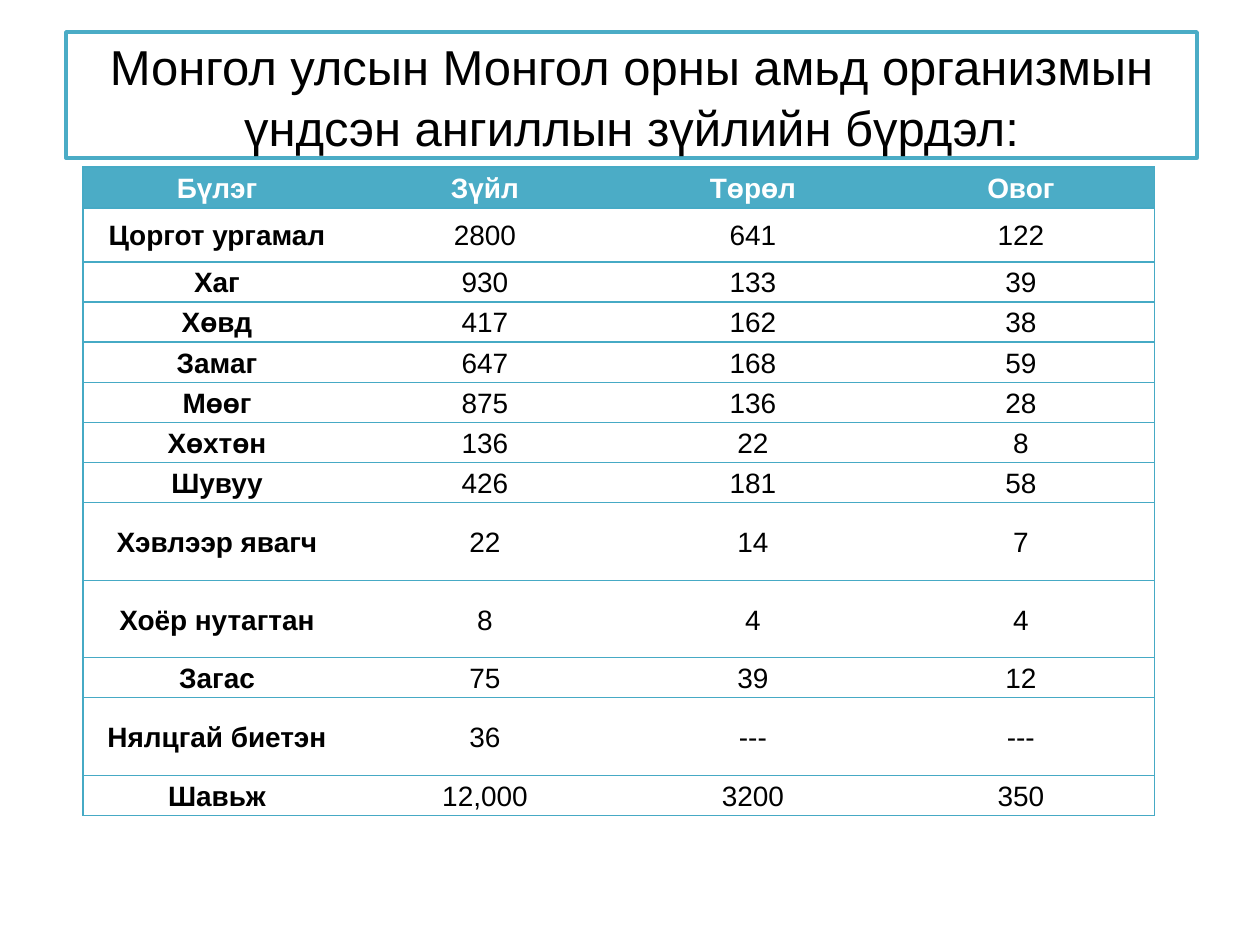
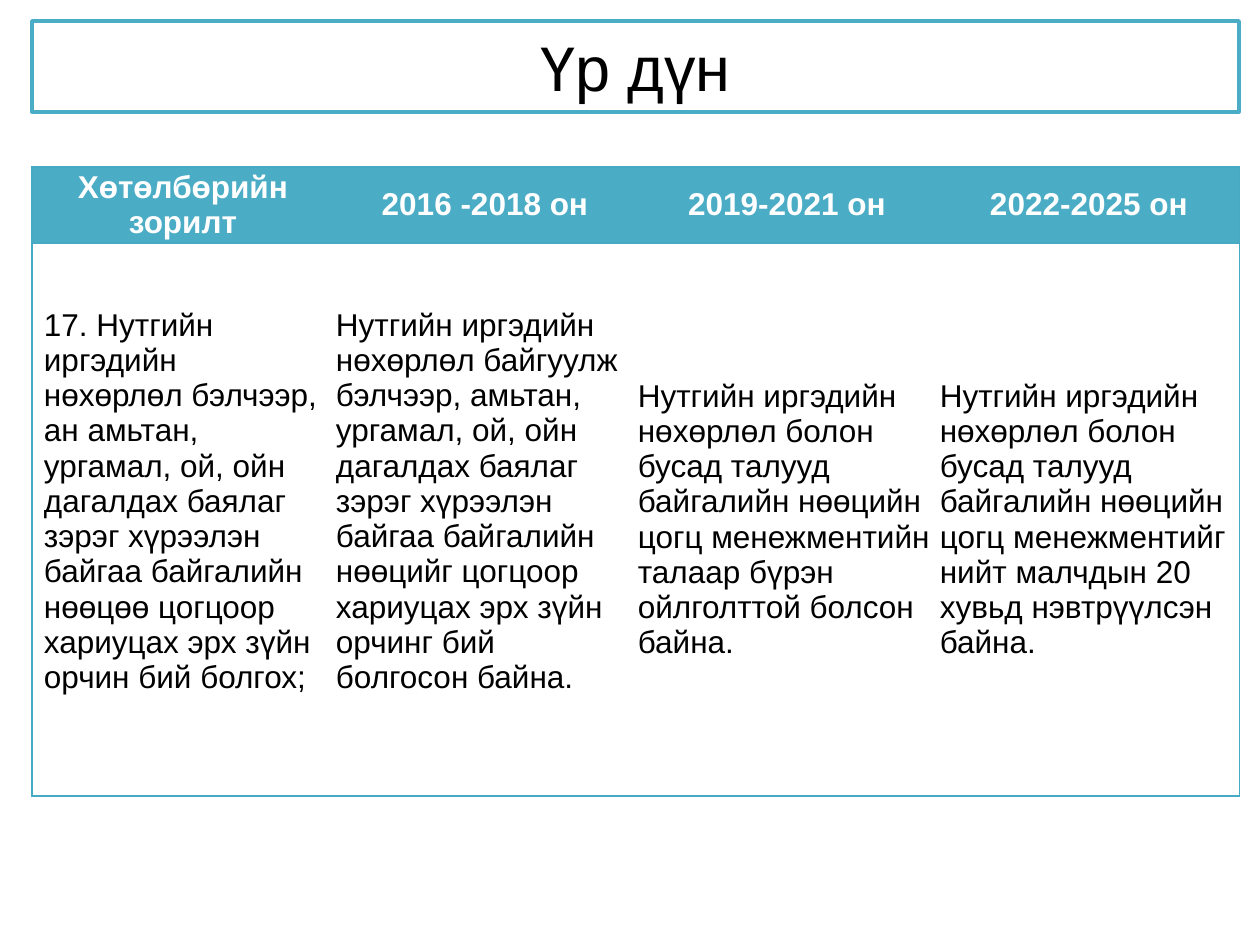
from lxml.etree import SubElement
from pptx import Presentation
from pptx.dml.color import RGBColor
from pptx.enum.text import MSO_ANCHOR as Anchor, MSO_AUTO_SIZE as AutoSize, PP_ALIGN as Align
from pptx.oxml.ns import qn
from pptx.util import Inches, Pt

PX = Inches(1) / 126
TEAL = RGBColor(0x4B, 0xAC, 0xC6)
BORDER = RGBColor(0x46, 0xAA, 0xC5)
WHITE = RGBColor(0xFF, 0xFF, 0xFF)
BLACK = RGBColor(0x00, 0x00, 0x00)
FONT = "Arial"
TITLE_ONLY = 5

SPECIES = {
    "title": "Монгол улсын Монгол орны амьд организмын үндсэн ангиллын зүйлийн бүрдэл:",
    "title_box": (66, 32, 1131, 126),
    "title_size": 28,
    "title_spacing": 1.05,
    "rows": [
        ("Бүлэг", "Зүйл", "Төрөл", "Овог"),
        ("Цоргот ургамал", "2800", "641", "122"),
        ("Хаг", "930", "133", "39"),
        ("Хөвд", "417", "162", "38"),
        ("Замаг", "647", "168", "59"),
        ("Мөөг", "875", "136", "28"),
        ("Хөхтөн", "136", "22", "8"),
        ("Шувуу", "426", "181", "58"),
        ("Хэвлээр явагч", "22", "14", "7"),
        ("Хоёр нутагтан", "8", "4", "4"),
        ("Загас", "75", "39", "12"),
        ("Нялцгай биетэн", "36", "---", "---"),
        ("Шавьж", "12,000", "3200", "350"),
    ],
    "table_at": (83, 167),
    "column_width": 268,
    "row_heights": [41, 54, 40, 40, 41, 40, 40, 40, 78, 77, 40, 78, 40],
    "text_size": 16,
    "line_spacing": 1.07,
    "body_align": Align.CENTER,
    "bold_first_column": True,
    "inset": 1,
    "cell_insets": {},
}

RESULTS = {
    "title": "Үр дүн",
    "title_box": (32, 21, 1207, 91),
    "title_size": 36,
    "title_spacing": 1.0,
    "rows": [
        ("Хөтөлбөрийн зорилт", "2016 -2018 он", "2019-2021 он", "2022-2025 он"),
        (
            "17. Нутгийн иргэдийн нөхөрлөл бэлчээр, ан амьтан, ургамал, ой, ойн дагалдах баялаг "
            "зэрэг хүрээлэн байгаа байгалийн нөөцөө цогцоор хариуцах эрх зүйн орчин бий болгох;",
            "Нутгийн иргэдийн нөхөрлөл байгуулж бэлчээр, амьтан, ургамал, ой, ойн дагалдах баялаг "
            "зэрэг хүрээлэн байгаа байгалийн нөөцийг цогцоор хариуцах эрх зүйн орчинг бий "
            "болгосон байна.",
            "Нутгийн иргэдийн нөхөрлөл болон бусад талууд байгалийн нөөцийн цогц менежментийн "
            "талаар бүрэн ойлголттой болсон байна.",
            "Нутгийн иргэдийн нөхөрлөл болон бусад талууд байгалийн нөөцийн цогц менежментийг "
            "нийт малчдын 20 хувьд нэвтрүүлсэн байна.",
        ),
    ],
    "table_at": (32, 167),
    "column_width": 302,
    "row_heights": [76, 553],
    "text_size": 18,
    "line_spacing": 1.0,
    "body_align": Align.LEFT,
    "bold_first_column": False,
    "inset": 2,
    "cell_insets": {
        (1, 0): {"margin_left": 12, "margin_right": 12, "margin_bottom": 38},
        (1, 1): {"margin_bottom": 38},
    },
}


def px(length):
    return round(length * PX)


def apply(target, values):
    for name, value in values.items():
        setattr(target, name, value)


def format_paragraph(paragraph, align, spacing, size, color, bold):
    apply(paragraph, {"alignment": align, "line_spacing": spacing})
    apply(paragraph.font, {"name": FONT, "size": Pt(size), "bold": bold})
    paragraph.font.color.rgb = color


def add_title(slide, content):
    title = slide.shapes.title
    left, top, width, height = map(px, content["title_box"])
    apply(title, {"left": left, "top": top, "width": width, "height": height})
    title.fill.solid()
    title.fill.fore_color.rgb = WHITE
    title.line.color.rgb = TEAL
    title.line.width = Pt(2)
    frame = title.text_frame
    frame.text = content["title"]
    apply(frame, {"word_wrap": True, "auto_size": AutoSize.NONE, "vertical_anchor": Anchor.MIDDLE})
    format_paragraph(frame.paragraphs[0], Align.CENTER, content["title_spacing"],
                     content["title_size"], BLACK, False)


def set_borders(cell, visible):
    properties = cell._tc.get_or_add_tcPr()
    for side in "LRTB":
        line = SubElement(properties, qn(f"a:ln{side}"), w=str(Pt(0.75)))
        if side in visible:
            fill = SubElement(line, qn("a:solidFill"))
            SubElement(fill, qn("a:srgbClr"), val=str(BORDER))
        else:
            SubElement(line, qn("a:noFill"))


def format_cell(cell, row, column, content):
    header = row == 0
    last_column = len(content["rows"][0]) - 1
    edges = "TB" + ("L" if column == 0 else "") + ("R" if column == last_column else "")
    set_borders(cell, edges)
    cell.fill.solid()
    cell.fill.fore_color.rgb = TEAL if header else WHITE
    cell.vertical_anchor = Anchor.MIDDLE
    insets = dict.fromkeys(("margin_left", "margin_right", "margin_top", "margin_bottom"),
                           content["inset"])
    insets.update(content["cell_insets"].get((row, column), {}))
    apply(cell, {name: px(inset) for name, inset in insets.items()})
    bold = header or (column == 0 and content["bold_first_column"])
    format_paragraph(cell.text_frame.paragraphs[0],
                     Align.CENTER if header else content["body_align"],
                     content["line_spacing"], content["text_size"],
                     WHITE if header else BLACK, bold)


def add_data_table(slide, content):
    rows, heights = content["rows"], content["row_heights"]
    column_count = len(rows[0])
    left, top = map(px, content["table_at"])
    table = slide.shapes.add_table(len(rows), column_count, left, top,
                                   px(column_count * content["column_width"]),
                                   px(sum(heights))).table
    table.horz_banding = False
    for column in table.columns:
        column.width = px(content["column_width"])
    for row, (texts, height) in enumerate(zip(rows, heights)):
        table.rows[row].height = px(height)
        for column, text in enumerate(texts):
            cell = table.cell(row, column)
            cell.text = text
            format_cell(cell, row, column, content)


def main():
    presentation = Presentation()
    apply(presentation, {"slide_width": Inches(10), "slide_height": Inches(7.5)})
    for content in (SPECIES, RESULTS):
        slide = presentation.slides.add_slide(presentation.slide_layouts[TITLE_ONLY])
        add_title(slide, content)
        add_data_table(slide, content)
    presentation.save("out.pptx")


if __name__ == "__main__":
    main()
